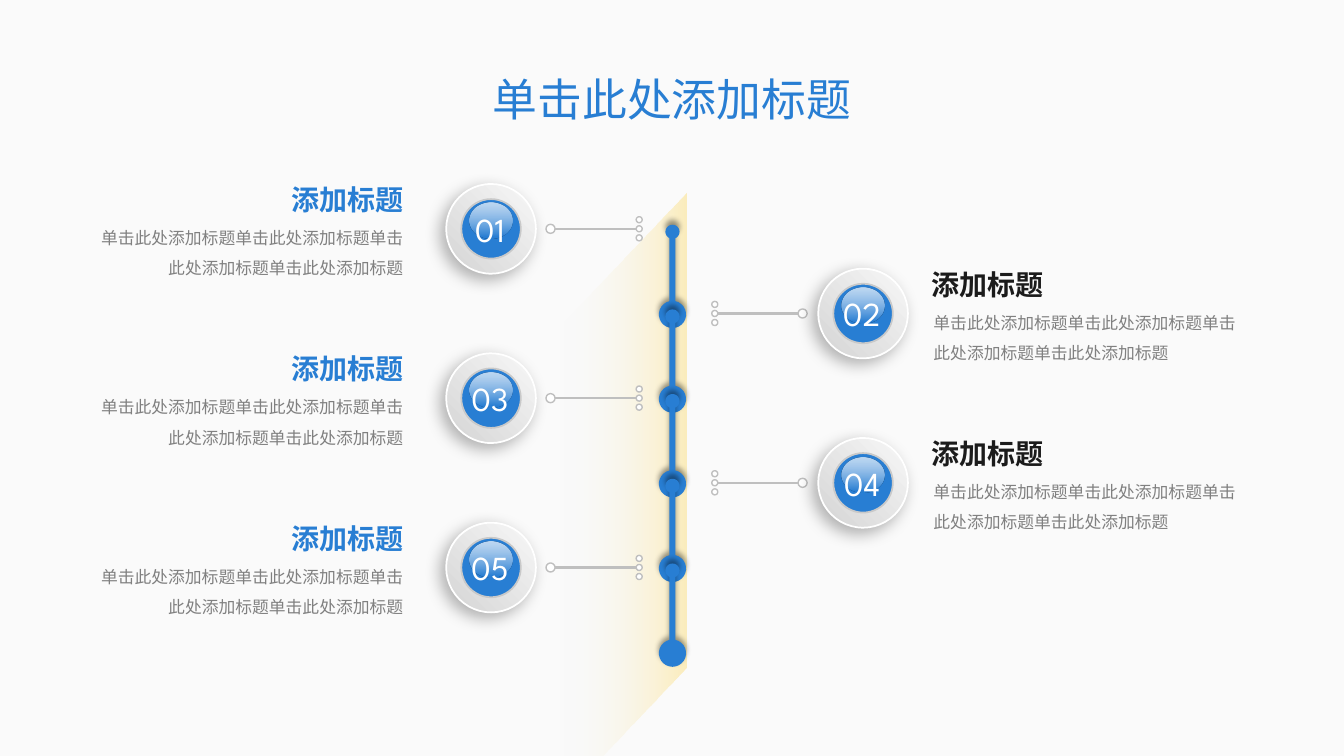
import math
from dataclasses import dataclass

import pptx
import pptx.dml.color
import pptx.enum.shapes
import pptx.enum.text
import pptx.oxml
import pptx.oxml.ns
import pptx.util
from lxml import etree
from pptx.util import Inches

BLUE, WHITE, GREY, SILVER = "287ED3", "FFFFFF", "BFBFBF", "C9C9C9"
LATIN, CJK = "League Spartan", "Noto Sans CJK SC"
HEADING = "添加标题"
BODY = "单击此处添加标题" * 4
SPINE_X, FIRST_Y, STEP = 6.67, 2.27, 0.84
SHAPE = pptx.enum.shapes.MSO_SHAPE
ALIGN = pptx.enum.text.PP_ALIGN


@dataclass
class Side:
    badge_x: float
    ring_x: float
    dots_x: float
    line_start: float
    line_end: float
    heading_left: float
    body_left: float
    heading_color: str
    align: int


LEFT = Side(4.87, 5.46, 6.34, 5.5, 6.31, 2.15, 0.89, BLUE, ALIGN.RIGHT)
RIGHT = Side(8.56, 7.96, 7.09, 7.92, 7.12, 9.14, 9.16, "1B1B1B", ALIGN.LEFT)


def rgb(color):
    return pptx.dml.color.RGBColor.from_string(color)


def set_gradient(shape, stops, angle):
    """Fill with stops of (position, colour, opacity), all but angle in percent."""
    shape.fill.gradient()
    old = shape._element.spPr.find(pptx.oxml.ns.qn("a:gradFill"))
    marks = "".join(
        f'<a:gs pos="{position * 1000}"><a:srgbClr val="{color}">'
        f'<a:alpha val="{opacity * 1000}"/></a:srgbClr></a:gs>'
        for position, color, opacity in stops
    )
    new = pptx.oxml.parse_xml(
        f'<a:gradFill rotWithShape="1" {pptx.oxml.ns.nsdecls("a")}>'
        f'<a:gsLst>{marks}</a:gsLst><a:lin ang="{angle * 60000}" scaled="0"/></a:gradFill>'
    )
    old.getparent().replace(old, new)


def add_shadow(shape, opacity, blur, distance, angle):
    effects = shape._element.spPr.find(pptx.oxml.ns.qn("a:effectLst"))
    effects.append(pptx.oxml.parse_xml(
        f'<a:outerShdw {pptx.oxml.ns.nsdecls("a")} blurRad="{pptx.util.Pt(blur)}" '
        f'dist="{pptx.util.Pt(distance)}" dir="{angle * 60000}" algn="ctr" rotWithShape="0">'
        f'<a:srgbClr val="000000"><a:alpha val="{opacity * 1000}"/></a:srgbClr></a:outerShdw>'
    ))


def style_shape(shape, fill=None, line=None, weight=1):
    shape.shadow.inherit = False
    if fill:
        shape.fill.solid()
        shape.fill.fore_color.rgb = rgb(fill)
    if line:
        shape.line.color.rgb = rgb(line)
        shape.line.width = pptx.util.Pt(weight)
    else:
        shape.line.fill.background()


def add_ellipse(shapes, center_x, center_y, width, height, **style):
    ellipse = shapes.add_shape(
        SHAPE.OVAL, Inches(center_x - width / 2), Inches(center_y - height / 2),
        Inches(width), Inches(height))
    style_shape(ellipse, **style)
    return ellipse


def add_text(shapes, text, left, top, width, height, align, color,
             wrap=True, spacing=None, **font):
    box = shapes.add_textbox(Inches(left), Inches(top), Inches(width), Inches(height))
    box.text_frame.word_wrap = wrap
    box.text_frame.auto_size = pptx.enum.text.MSO_AUTO_SIZE.SHAPE_TO_FIT_TEXT
    para = box.text_frame.paragraphs[0]
    para.alignment = align
    para.line_spacing = spacing
    span = para.add_run()
    span.text = text
    for name, value in font.items():
        setattr(span.font, name, value)
    span.font.color.rgb = rgb(color)
    etree.SubElement(span._r.get_or_add_rPr(), pptx.oxml.ns.qn("a:ea"), typeface=CJK)


def arc(center_y, radius, start, end, steps=24):
    """Points of an arc centred on the spine; degrees run clockwise from the right."""
    angles = [math.radians(start + (end - start) * i / steps) for i in range(steps + 1)]
    return [(Inches(SPINE_X + radius * math.cos(a)), Inches(center_y + radius * math.sin(a)))
            for a in angles]


def add_spine_link(shapes, top):
    """A small disc, a stem and a larger disc drawn as one outline."""
    small, large, stem = 0.07, 0.135, 0.03
    small_gap = math.degrees(math.asin(stem / small))
    large_gap = math.degrees(math.asin(stem / large))
    points = arc(top + small, small, 90 + small_gap, 450 - small_gap)
    points += arc(top + 0.89, large, -90 + large_gap, 270 - large_gap)
    builder = shapes.build_freeform(*points[0])
    builder.add_line_segments(points[1:], close=True)
    link = builder.convert_to_shape()
    style_shape(link, fill=BLUE)
    add_shadow(link, 40, 4, 3, 270)


def add_spine(slide):
    shapes = slide.shapes.add_group_shape().shapes
    glow = shapes.add_shape(
        SHAPE.PARALLELOGRAM, Inches(3.18), Inches(4.3), Inches(6.02), Inches(1.24))
    style_shape(glow)
    glow.adjustments[0] = 1.06
    glow.rotation = 270
    glow._element.spPr.find(pptx.oxml.ns.qn("a:xfrm")).set("flipH", "1")
    set_gradient(glow, [(0, "F2F2F2", 0), (100, "FFC400", 25)], 90)
    for i in range(5):
        add_spine_link(shapes, FIRST_Y - 0.04 + STEP * i)


def add_callout(slide, side, y):
    shapes = slide.shapes.add_group_shape().shapes
    for offset in (-0.09, 0, 0.09):
        add_ellipse(shapes, side.dots_x, y + offset, 0.06, 0.06, fill=WHITE, line=GREY)
    add_ellipse(shapes, side.ring_x, y, 0.09, 0.09, fill=WHITE, line=GREY)
    line = shapes.add_connector(
        pptx.enum.shapes.MSO_CONNECTOR.STRAIGHT,
        Inches(side.line_start), Inches(y), Inches(side.line_end), Inches(y))
    line.line.color.rgb = rgb(GREY)
    line.line.width = pptx.util.Pt(1.5)
    etree.SubElement(line._element.spPr, pptx.oxml.ns.qn("a:effectLst"))


def add_badge(slide, side, y, number):
    shapes = slide.shapes.add_group_shape().shapes
    x = side.badge_x
    rim = add_ellipse(shapes, x, y, 0.89, 0.89, line=WHITE, weight=1.25)
    set_gradient(rim, [(0, "F7F7F7", 100), (100, "D5D5D5", 100)], 135)
    add_shadow(rim, 30, 12, 5, 135)
    add_ellipse(shapes, x, y, 0.59, 0.59, fill=BLUE, line=SILVER, weight=1.25)
    gloss = add_ellipse(shapes, x, y - 0.08, 0.42, 0.35)
    set_gradient(gloss, [(0, WHITE, 70), (95, BLUE, 100)], 90)
    add_text(shapes, f"{number:02}", x - 0.36, y - 0.25, 0.7, 0.5, ALIGN.CENTER, WHITE,
             name=LATIN, size=pptx.util.Pt(24))


def add_caption(slide, side, y):
    shapes = slide.shapes.add_group_shape().shapes
    add_text(shapes, HEADING, side.heading_left, y - 0.51, 1.95, 0.44, side.align,
             side.heading_color, name=LATIN, size=pptx.util.Pt(20), bold=True)
    add_text(shapes, BODY, side.body_left, y - 0.16, 3.21, 0.68, side.align, "808080",
             spacing=1.5, name=LATIN, size=pptx.util.Pt(12))


def main():
    deck = pptx.Presentation()
    deck.slide_width, deck.slide_height = Inches(13.33), Inches(7.5)
    slide = deck.slides.add_slide(deck.slide_layouts[6])
    slide.background.fill.solid()
    slide.background.fill.fore_color.rgb = rgb("FAFAFA")
    add_text(slide.shapes, "单击此处添加标题", 4.77, 0.66, 3.79, 0.64, ALIGN.CENTER, BLUE,
             wrap=False, name=CJK, size=pptx.util.Pt(32))
    add_spine(slide)
    for i in range(5):
        side = RIGHT if i % 2 else LEFT
        y = FIRST_Y + STEP * i
        add_callout(slide, side, y)
        add_badge(slide, side, y, i + 1)
        add_caption(slide, side, y)
    deck.save("out.pptx")


if __name__ == "__main__":
    main()
